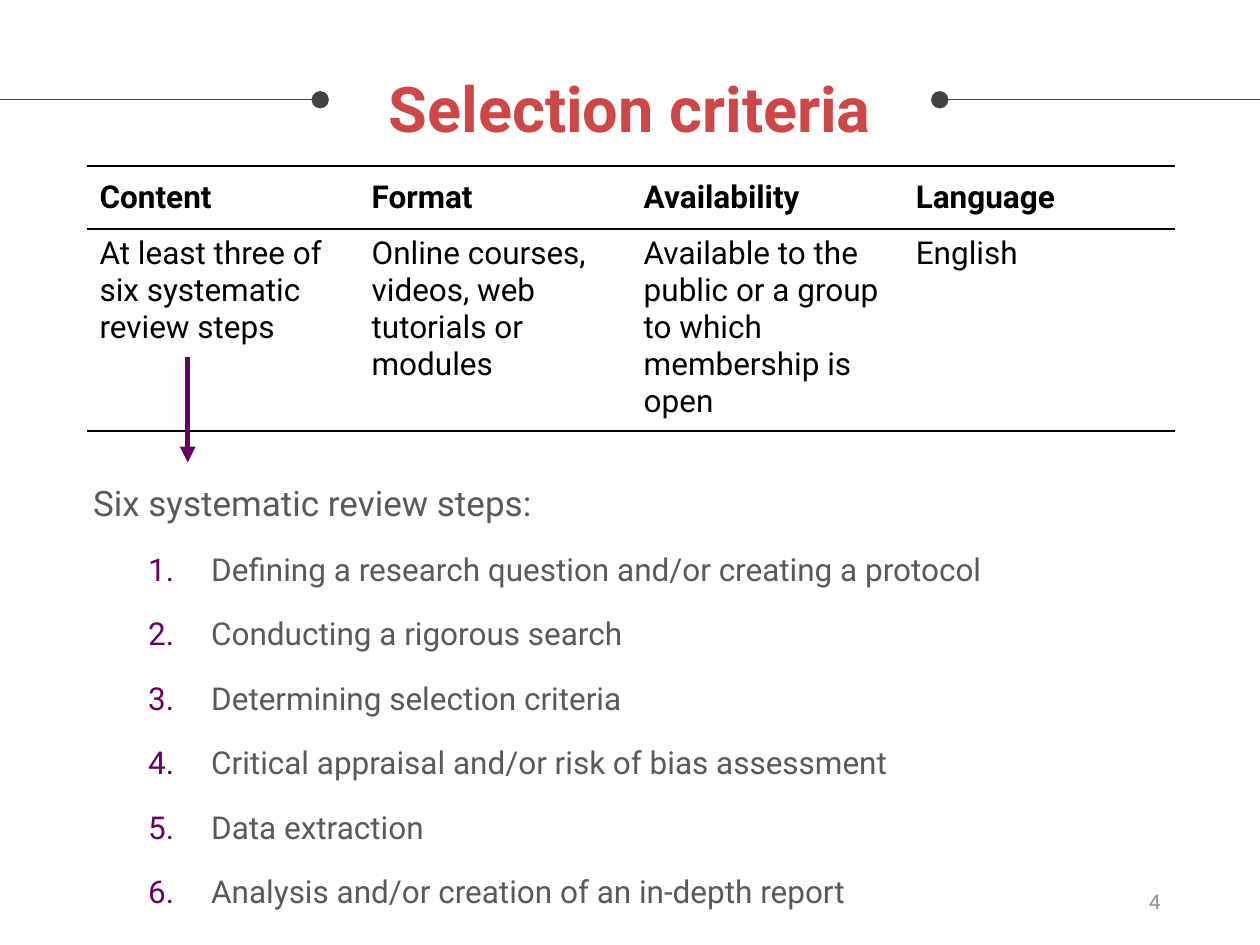
from lxml import etree
from pptx import Presentation
from pptx.dml.color import RGBColor
from pptx.enum.shapes import MSO_CONNECTOR
from pptx.enum.text import MSO_ANCHOR, PP_ALIGN
from pptx.oxml.ns import qn
from pptx.util import Pt

STRAIGHT = MSO_CONNECTOR.STRAIGHT
MIDDLE, TOP = MSO_ANCHOR.MIDDLE, MSO_ANCHOR.TOP
LEFT, CENTER, RIGHT = PP_ALIGN.LEFT, PP_ALIGN.CENTER, PP_ALIGN.RIGHT

TITLE = "Selection criteria"
PAGE_NUMBER = "4"
CRITERIA = [
    ("Content", "At least three of six systematic review steps"),
    ("Format", "Online courses, videos, web tutorials or modules"),
    ("Availability", "Available to the public or a group to which membership is open"),
    ("Language", "English"),
]
STEPS_HEADING = "Six systematic review steps:"
STEPS = [
    "Defining a research question and/or creating a protocol",
    "Conducting a rigorous search",
    "Determining selection criteria",
    "Critical appraisal and/or risk of bias assessment",
    "Data extraction",
    "Analysis and/or creation of an in-depth report",
]

BLACK, GRAY, PURPLE, RULE = "000000", "595959", "660066", "434343"
RULE_TOP = 57
TABLE_LEFT, TABLE_TOP, COLUMN_WIDTH = 49.7, 95, 155.5
ROW_HEIGHTS = (36, 112.5)


def color(value):
    return RGBColor.from_string(value)


def add_child(parent, tag, **attributes):
    return etree.SubElement(parent, qn(tag), attributes)


def style(paragraph, size, value, font="Roboto", bold=False, align=LEFT):
    paragraph.alignment = align
    for span in paragraph.runs:
        span.font.size = Pt(size)
        span.font.name = font
        span.font.bold = bold
        span.font.color.rgb = color(value)


def set_frame(frame, inset, anchor):
    frame.word_wrap = True
    frame.vertical_anchor = anchor
    frame.margin_left = frame.margin_right = Pt(7.2)
    frame.margin_top = frame.margin_bottom = Pt(inset)


def add_line(page, start, end, value, width, tag, kind, size):
    line = page.shapes.add_connector(STRAIGHT, *(Pt(n) for n in start + end))
    line.line.color.rgb = color(value)
    line.line.width = Pt(width)
    add_child(line.line._get_or_add_ln(), tag, type=kind, w=size, len=size)
    add_child(line._element.spPr, "a:effectLst")


def set_borders(cell, sides):
    properties = cell._tc.get_or_add_tcPr()
    for side in ("L", "R", "T", "B"):
        if side in sides:
            border = add_child(properties, "a:ln" + side, w=str(Pt(1)))
            fill = add_child(border, "a:solidFill")
            add_child(fill, "a:srgbClr", val=BLACK)
        else:
            border = add_child(properties, "a:ln" + side, w="0")
            add_child(border, "a:noFill")


def add_criteria(page):
    width = COLUMN_WIDTH * len(CRITERIA)
    frame = page.shapes.add_table(
        2, len(CRITERIA), Pt(TABLE_LEFT), Pt(TABLE_TOP), Pt(width), Pt(sum(ROW_HEIGHTS)))
    table = frame.table
    table.first_row = table.horz_banding = False
    for row, height in zip(table.rows, ROW_HEIGHTS):
        row.height = Pt(height)
    for column, texts in enumerate(CRITERIA):
        table.columns[column].width = Pt(COLUMN_WIDTH)
        for row, text in enumerate(texts):
            header = row == 0
            cell = table.cell(row, column)
            cell.text = text
            cell.vertical_anchor = MIDDLE if header else TOP
            style(cell.text_frame.paragraphs[0], 18, BLACK, bold=header)
            set_borders(cell, "TB")
            cell.fill.background()


def add_steps(page):
    box = page.shapes.add_textbox(Pt(46.1), Pt(264.2), Pt(622.8), Pt(162.7))
    set_frame(box.text_frame, 7.2, TOP)
    box.text_frame.text = "\n".join([STEPS_HEADING] + STEPS)
    for index, para in enumerate(box.text_frame.paragraphs):
        para.line_spacing = 1.15
        para.space_after = Pt(12)
        if index:
            properties = para._p.get_or_add_pPr()
            properties.set("marL", str(Pt(67.5)))
            properties.set("indent", str(Pt(-36)))
            add_child(add_child(properties, "a:buClr"), "a:srgbClr", val=PURPLE)
            add_child(properties, "a:buFont", typeface="Roboto")
            add_child(properties, "a:buAutoNum", type="arabicPeriod")
        style(para, 18 if index else 20, GRAY)


def main():
    deck = Presentation()
    deck.slide_width, deck.slide_height = Pt(720), Pt(540)
    page = deck.slides.add_slide(deck.slide_layouts[5])

    for inner, outer in ((183, 0), (537, 720)):
        add_line(page, (inner, RULE_TOP), (outer, RULE_TOP), RULE, 0.75,
                 "a:headEnd", "oval", "lg")

    title = page.shapes.title
    title.left, title.top, title.width, title.height = Pt(143.3), Pt(27.4), Pt(433.4), Pt(67.7)
    title.text_frame.text = TITLE
    set_frame(title.text_frame, 7.2, MIDDLE)
    style(title.text_frame.paragraphs[0], 36, "CD4747", bold=True, align=CENTER)

    number = page.shapes.add_textbox(Pt(508.3), Pt(500.4), Pt(162), Pt(28.8))
    number.text_frame.text = PAGE_NUMBER
    set_frame(number.text_frame, 3.6, MIDDLE)
    style(number.text_frame.paragraphs[0], 12, "8C8C8C", font="Arial", align=RIGHT)

    add_steps(page)
    add_criteria(page)
    add_line(page, (107.3, 203.8), (107.3, 264.2), PURPLE, 3, "a:tailEnd", "triangle", "med")
    deck.save("out.pptx")


if __name__ == "__main__":
    main()
